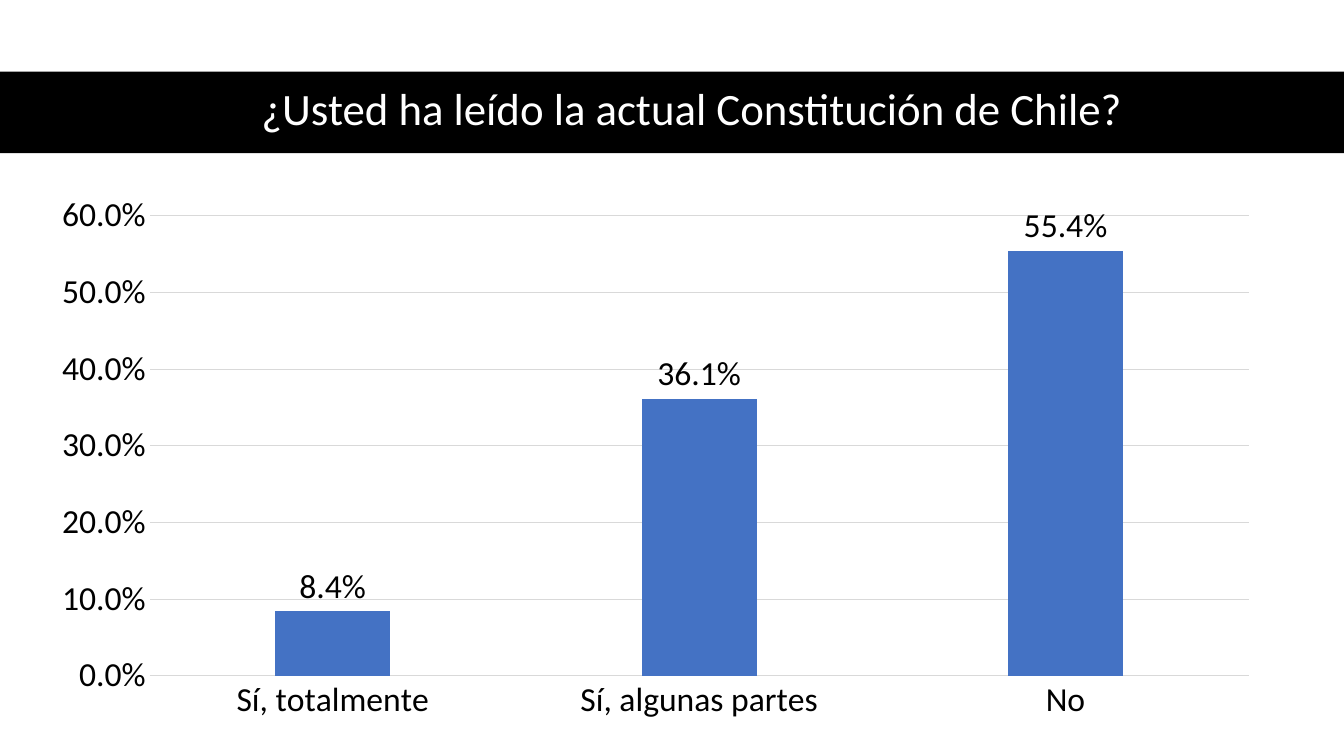
from pptx import Presentation
from pptx import util as u
from pptx.chart import data as chart_data
from pptx.dml.color import RGBColor
from pptx.enum import chart as ch, shapes, text

COLORS = {"band": "000000", "title": "FFFFFF", "ink": "000000",
          "grid": "D9D9D9", "bar": "4472C4"}
PERCENT = "0.0%"


class SurveySlide:
    """Holds the style and the current slide."""
    font_name = "Calibri"
    title_size = u.Pt(32)
    chart_size = u.Pt(24)

    def __init__(self, deck):
        self.slide = deck.slides.add_slide(deck.slide_layouts[5])

    def color(self, key):
        return RGBColor.from_string(COLORS[key])

    def style_font(self, font, size, key):
        font.name = self.font_name
        font.size = size
        font.color.rgb = self.color(key)

    def style_line(self, line, key):
        line.color.rgb = self.color(key)
        line.width = u.Pt(0.75)

    def band(self, left, top, width, height):
        band = self.slide.shapes.add_shape(
            shapes.MSO_SHAPE.RECTANGLE, left, top, width, height)
        band.shadow.inherit = False
        band.fill.solid()
        band.fill.fore_color.rgb = self.color("band")
        band.line.fill.background()
        # The band sits behind the title
        self.slide.shapes.title.element.addprevious(band.element)

    def title(self, wording, left, top, width, height):
        question = self.slide.shapes.title
        question.left, question.top = left, top
        question.width, question.height = width, height
        frame = question.text_frame
        frame.word_wrap = True
        frame.auto_size = text.MSO_AUTO_SIZE.NONE
        frame.vertical_anchor = text.MSO_ANCHOR.MIDDLE
        paragraph = frame.paragraphs[0]
        paragraph.alignment = text.PP_ALIGN.CENTER
        paragraph.line_spacing = 0.9
        paragraph.space_after = u.Pt(8)
        properties = paragraph._p.get_or_add_pPr()
        properties.set("marL", str(u.Inches(0.25)))
        properties.set("indent", "0")
        run = paragraph.add_run()
        run.text = wording
        self.style_font(run.font, self.title_size, "title")

    def column_chart(self, answers, left, top, width, height):
        shares = chart_data.CategoryChartData(number_format=PERCENT)
        shares.categories = list(answers)
        shares.add_series("Series 1", list(answers.values()))
        chart = self.slide.shapes.add_chart(
            ch.XL_CHART_TYPE.COLUMN_CLUSTERED,
            left, top, width, height, shares).chart
        chart.has_title = False
        chart.has_legend = False
        self.style_font(chart.font, self.chart_size, "ink")

        # Columns and their labels
        plot = chart.plots[0]
        plot.vary_by_categories = False
        plot.gap_width = 219
        plot.overlap = -27
        columns = plot.series[0]
        columns.format.fill.solid()
        columns.format.fill.fore_color.rgb = self.color("bar")
        labels = columns.data_labels
        labels.show_value = True
        labels.position = ch.XL_LABEL_POSITION.OUTSIDE_END
        labels.number_format = PERCENT
        labels.number_format_is_linked = False
        self.style_font(labels.font, self.chart_size, "ink")

        # Axes
        answer_axis, share_axis = chart.category_axis, chart.value_axis
        for axis in (answer_axis, share_axis):
            axis.major_tick_mark = ch.XL_TICK_MARK.NONE
            axis.minor_tick_mark = ch.XL_TICK_MARK.NONE
            self.style_font(axis.tick_labels.font, self.chart_size, "ink")
        self.style_line(answer_axis.format.line, "grid")
        share_axis.format.line.fill.background()
        share_axis.minimum_scale = 0
        share_axis.maximum_scale = 0.6
        share_axis.major_unit = 0.1
        share_axis.has_major_gridlines = True
        self.style_line(share_axis.major_gridlines.format.line, "grid")
        share_axis.tick_labels.number_format = PERCENT
        share_axis.tick_labels.number_format_is_linked = False


def main():
    deck = Presentation()
    deck.slide_width = u.Inches(13.33)
    deck.slide_height = u.Inches(7.5)
    survey = SurveySlide(deck)

    # Heading
    survey.band(0, u.Inches(0.71), deck.slide_width, u.Inches(0.81))
    survey.title("¿Usted ha leído la actual Constitución de Chile?",
                 u.Inches(0.61), u.Inches(0.7), u.Inches(12.26), u.Inches(0.81))

    # Answers
    survey.column_chart(
        {"Sí, totalmente": 0.084, "Sí, algunas partes": 0.361, "No": 0.554},
        u.Inches(0.37), u.Inches(1.83), u.Inches(12.26), u.Inches(5.43))
    deck.save("out.pptx")


if __name__ == "__main__":
    main()
